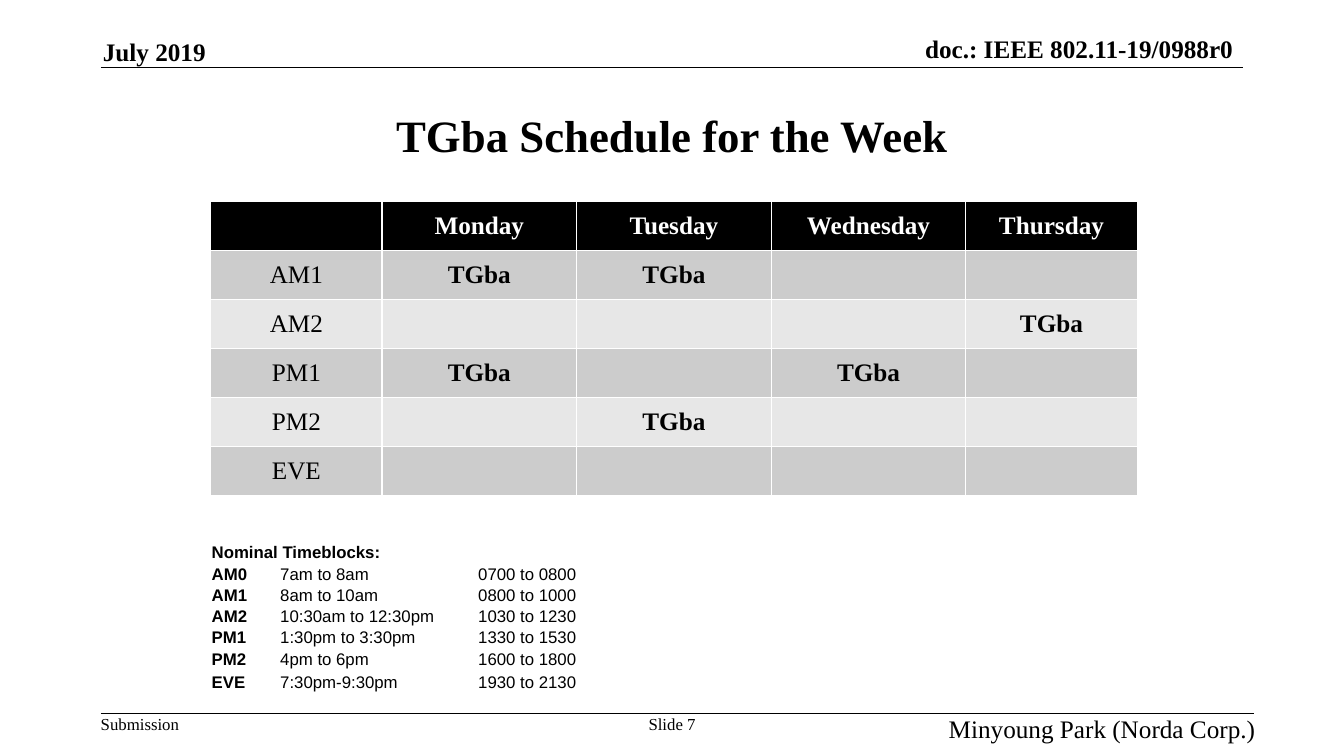
from lxml.etree import SubElement
from pptx import Presentation
from pptx.dml.color import RGBColor
from pptx.enum.shapes import MSO_CONNECTOR
from pptx.enum.text import MSO_ANCHOR as Anchor, MSO_AUTO_SIZE as AutoSize, PP_ALIGN as Align
from pptx.oxml.ns import qn
from pptx.util import Inches, Pt

BLACK = RGBColor(0x00, 0x00, 0x00)
WHITE = RGBColor(0xFF, 0xFF, 0xFF)
DARK_BAND = RGBColor(0xCC, 0xCC, 0xCC)
LIGHT_BAND = RGBColor(0xE7, 0xE7, 0xE7)
SERIF = "Times New Roman"
SANS = "Arial"
NO_STYLE = "{2D5ABB26-0587-4C30-8999-92F81FD0307C}"

DAYS = ["Monday", "Tuesday", "Wednesday", "Thursday"]
MEETINGS = {
    "AM1": ["Monday", "Tuesday"],
    "AM2": ["Thursday"],
    "PM1": ["Monday", "Wednesday"],
    "PM2": ["Tuesday"],
    "EVE": [],
}
TIMEBLOCKS = [
    ("AM0", "7am to 8am", "0700 to 0800"),
    ("AM1", "8am to 10am", "0800 to 1000"),
    ("AM2", "10:30am to 12:30pm", "1030 to 1230"),
    ("PM1", "1:30pm to 3:30pm", "1330 to 1530"),
    ("PM2", "4pm to 6pm", "1600 to 1800"),
    ("EVE", "7:30pm-9:30pm", "1930 to 2130"),
]


def apply(target, values):
    for name, value in values.items():
        setattr(target, name, value)


class SlideBuilder:
    """Places elements by percentages of the slide's width and height."""

    def __init__(self, presentation):
        self.width = presentation.slide_width
        self.height = presentation.slide_height
        self.slide = presentation.slides.add_slide(presentation.slide_layouts[5])

    def across(self, percent):
        return round(self.width * percent / 100)

    def down(self, percent):
        return round(self.height * percent / 100)

    def area(self, left, top, width, height):
        return self.across(left), self.down(top), self.across(width), self.down(height)

    def add_text(self, paragraph, text, size, bold=False, align=Align.LEFT, color=BLACK, name=SERIF):
        paragraph.alignment = align
        run = paragraph.add_run()
        run.text = text
        apply(run.font, {"size": Pt(size), "bold": bold, "name": name})
        run.font.color.rgb = color

    def title(self, text, area):
        shape = self.slide.shapes.title
        apply(shape, dict(zip(("left", "top", "width", "height"), self.area(*area))))
        apply(shape.text_frame, {"vertical_anchor": Anchor.MIDDLE, "auto_size": AutoSize.NONE})
        self.add_text(shape.text_frame.paragraphs[0], text, 32, True, Align.CENTER)

    def label(self, text, area, size, bold=False, align=Align.LEFT, anchor=Anchor.TOP, wrap=False):
        frame = self.slide.shapes.add_textbox(*self.area(*area)).text_frame
        apply(frame, {
            "margin_left": 0, "margin_right": 0, "margin_top": 0, "margin_bottom": 0,
            "vertical_anchor": anchor, "word_wrap": wrap, "auto_size": AutoSize.SHAPE_TO_FIT_TEXT,
        })
        self.add_text(frame.paragraphs[0], text, size, bold, align)

    def rule(self, left, right, top):
        line = self.slide.shapes.add_connector(
            MSO_CONNECTOR.STRAIGHT, self.across(left), self.down(top), self.across(right), self.down(top))
        line.line.width = Pt(1)
        line.line.color.rgb = BLACK
        SubElement(line._element.spPr, qn("a:effectLst"))

    def table(self, left, top, columns, rows):
        area = self.area(left, top, sum(columns), sum(rows))
        table = self.slide.shapes.add_table(len(rows), len(columns), *area).table
        apply(table, {"first_row": False, "horz_banding": False})
        table._tbl.tblPr.find(qn("a:tableStyleId")).text = NO_STYLE
        for column, width in zip(table.columns, columns):
            column.width = self.across(width)
        for row, height in zip(table.rows, rows):
            row.height = self.down(height)
        return table

    def cell(self, cell, text, cell_format, fill=None, **text_format):
        apply(cell, cell_format)
        if fill is None:
            cell.fill.background()
        else:
            self.borders(cell)
            cell.fill.solid()
            cell.fill.fore_color.rgb = fill
        paragraph = cell.text_frame.paragraphs[0]
        if text:
            self.add_text(paragraph, text, **text_format)
        else:
            SubElement(paragraph._p, qn("a:endParaRPr"), sz=str(text_format["size"] * 100))

    def borders(self, cell):
        properties = cell._tc.get_or_add_tcPr()
        for side in ("L", "R", "T", "B"):
            line = SubElement(properties, qn(f"a:ln{side}"), w=str(Pt(1)))
            SubElement(SubElement(line, qn("a:solidFill")), qn("a:srgbClr"), val=str(WHITE))

    def schedule(self):
        grid = [["", *DAYS]]
        for block, days in MEETINGS.items():
            grid.append([block, *("TGba" if day in days else "" for day in DAYS)])
        table = self.table(15.68, 26.67, [12.75, 14.48, 14.48, 14.48, 12.75], [6.49] * len(grid))
        for row, texts in enumerate(grid):
            fill = BLACK if row == 0 else DARK_BAND if row % 2 else LIGHT_BAND
            for column, text in enumerate(texts):
                self.cell(table.cell(row, column), text, {"vertical_anchor": Anchor.MIDDLE}, fill,
                          size=18, bold=column > 0, align=Align.CENTER,
                          color=BLACK if row else WHITE)

    def timeblocks(self):
        table = self.table(15.68, 71.6, [5.1, 9.83, 4.9, 4.95, 4.95],
                           [2.4, 2.8, 2.4, 2.4, 2.4, 2.93, 2.93])
        grid = [["Nominal Timeblocks:", "", "", "", ""]]
        grid += [[block, clock, "", hours, ""] for block, clock, hours in TIMEBLOCKS]
        margins = {"margin_left": Inches(0.01), "margin_right": Inches(0.01),
                   "margin_top": Inches(0.01), "margin_bottom": 0, "vertical_anchor": Anchor.BOTTOM}
        for row, texts in enumerate(grid):
            for column, text in enumerate(texts):
                self.cell(table.cell(row, column), text, margins,
                          size=12, bold=column == 0, name=SANS)
        table.cell(0, 0).merge(table.cell(0, 2))
        for row, (block, clock, hours) in enumerate(TIMEBLOCKS, 1):
            table.cell(row, 3).merge(table.cell(row, 4))
            if len(clock) > 12:
                table.cell(row, 1).merge(table.cell(row, 2))


def main():
    presentation = Presentation()
    presentation.slide_width = Inches(13.33)
    presentation.slide_height = Inches(7.5)
    builder = SlideBuilder(presentation)
    builder.label("doc.: IEEE 802.11-19/0988r0", (64.82, 4.4, 26.93, 4), 18, True,
                  Align.RIGHT, Anchor.BOTTOM)
    builder.rule(7.5, 92.5, 8.93)
    builder.label("Submission", (7.5, 94.4, 5.93, 2.67), 12)
    builder.rule(7.5, 93.32, 94.4)
    builder.title("TGba Schedule for the Week", (7.5, 10, 85, 15.6))
    builder.schedule()
    builder.label("July 2019", (7.65, 4.8, 9.68, 4), 18, True, anchor=Anchor.BOTTOM)
    builder.label("Minyoung Park (Norda Corp.)", (63.32, 94.4, 30.08, 2.67), 18,
                  align=Align.RIGHT, wrap=True)
    builder.label("Slide 7", (48.24, 94.4, 3.53, 2.67), 12, align=Align.CENTER)
    builder.timeblocks()
    presentation.save("out.pptx")


if __name__ == "__main__":
    main()
